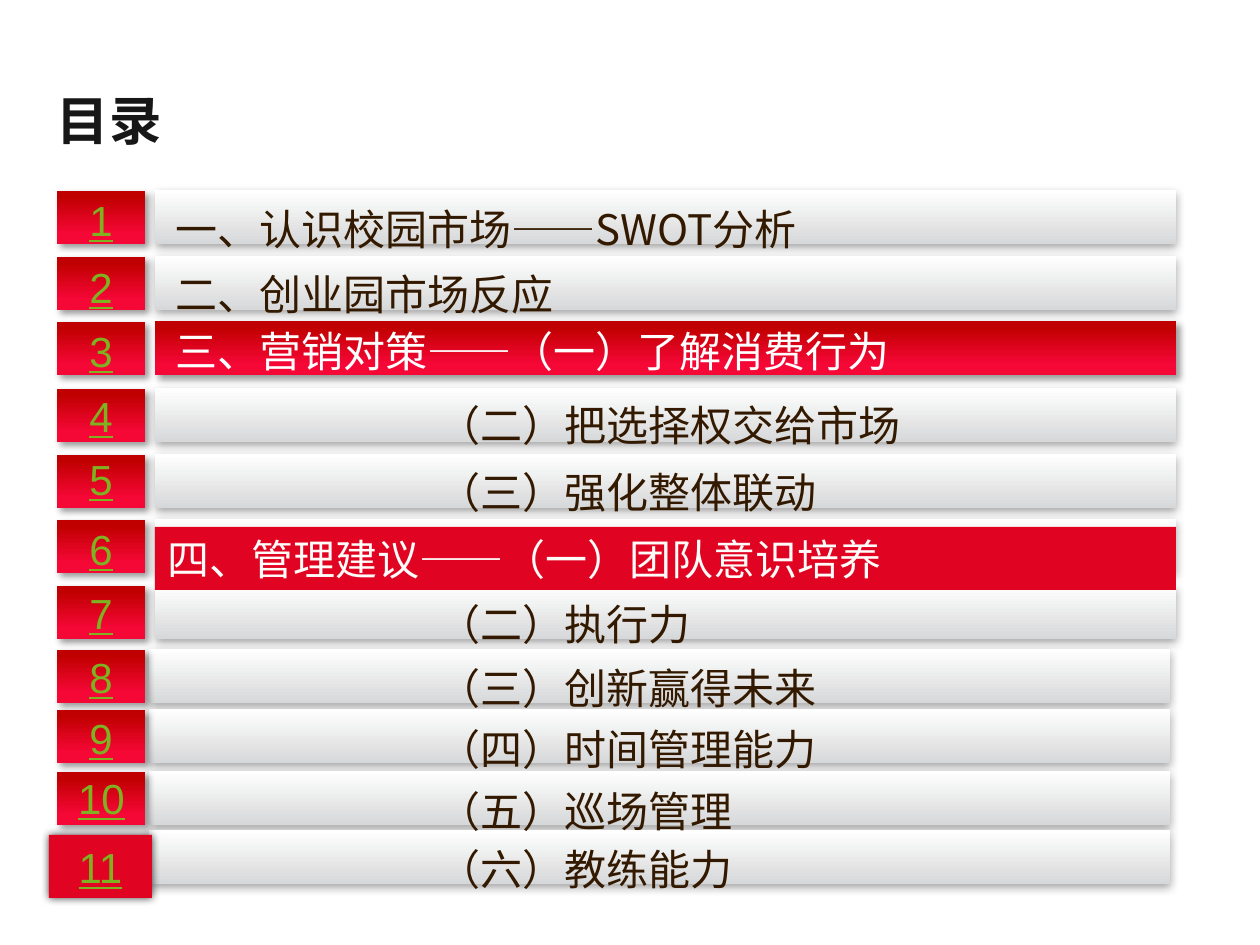
import pptx
import pptx.util
import pptx.dml.color
import pptx.enum.shapes
import pptx.enum.text
import pptx.oxml.ns
from lxml import etree

SCALE = 914400 / 126  # EMU per px
CJK = "Noto Sans CJK SC"
BROWN, WHITE, GREEN, RED = "321900", "FFFFFF", "7EB220", "E10422"
GREY_FADE = [(0, "D7D8D9"), (100, "FFFFFF")]
RED_FADE = [(20, "F50736"), (89, "C00000")]
# Shadows: opacity %, blur pt, distance pt, direction in degrees
SOFT, DEEP, GLOW = (35, 5, 1.8, 90), (40, 4, 3, 45), (75, 5, 0, 0)
BAR_W, BAR_H, TILE_W, TILE_H, LINE_H = 1021, 54, 88, 53, 63
SUB_INDENT = 263

# Bar top, label top, number top, indent, label
ROWS = [
    (190, 197, 188, 0, "一、认识校园市场——SWOT分析"),
    (256, 262, 255, 0, "二、创业园市场反应"),
    (321, 319, 319, 0, "三、营销对策——（一）了解消费行为"),
    (388, 393, 384, SUB_INDENT, "（二）把选择权交给市场"),
    (454, 460, 447, SUB_INDENT, "（三）强化整体联动"),
    (519, 527, 517, 0, "四、管理建议——（一）团队意识培养"),
    (585, 592, 581, SUB_INDENT, "（二）执行力"),
    (649, 656, 645, SUB_INDENT, "（三）创新赢得未来"),
    (709, 717, 706, SUB_INDENT, "（四）时间管理能力"),
    (771, 779, 766, SUB_INDENT, "（五）巡场管理"),
    (830, 837, 835, SUB_INDENT, "（六）教练能力"),
]


def px(n):
    return pptx.util.Emu(round(n * SCALE))


def rgb(value):
    return pptx.dml.color.RGBColor.from_string(value)


def add_shadow(sp, opacity, blur, dist, angle):
    qn = pptx.oxml.ns.qn
    effects = sp._element.spPr.find(qn("a:effectLst"))
    outer = etree.SubElement(
        effects, qn("a:outerShdw"), blurRad=str(round(blur * 12700)),
        dist=str(round(dist * 12700)), dir=str(angle * 60000),
        algn="ctr", rotWithShape="0")
    clr = etree.SubElement(outer, qn("a:srgbClr"), val="000000")
    etree.SubElement(clr, qn("a:alpha"), val=str(opacity * 1000))


def add_rect(s, x, y, w, h, fill, shadow=None):
    """Add a rectangle; fill is a hex colour or a list of gradient stops."""
    sp = s.shapes.add_shape(
        pptx.enum.shapes.MSO_SHAPE.RECTANGLE, px(x), px(y), px(w), px(h))
    sp.shadow.inherit = False
    sp.line.fill.background()
    if isinstance(fill, str):
        sp.fill.solid()
        sp.fill.fore_color.rgb = rgb(fill)
    else:
        sp.fill.gradient()
        sp.fill.gradient_angle = 90
        for stop, (position, color) in zip(sp.fill.gradient_stops, fill):
            stop.position = position / 100
            stop.color.rgb = rgb(color)
    if shadow:
        add_shadow(sp, *shadow)
    return sp


def write_text(sp, text, color, font=CJK, size=24, centred=False, indent=0):
    align = pptx.enum.text.PP_ALIGN
    tf = sp.text_frame
    tf.word_wrap = True
    tf.auto_size = pptx.enum.text.MSO_AUTO_SIZE.NONE
    tf.vertical_anchor = pptx.enum.text.MSO_ANCHOR.MIDDLE
    p = tf.paragraphs[0]
    p.alignment = align.CENTER if centred else align.LEFT
    if indent:
        p._p.get_or_add_pPr().set("marL", str(px(indent)))
    r = p.add_run()
    r.text = text
    r.font.size = pptx.util.Pt(size)
    r.font.name = font
    r.font.color.rgb = rgb(color)
    etree.SubElement(r._r.get_or_add_rPr(), pptx.oxml.ns.qn("a:ea"),
                     typeface=font)
    return p, r


def add_label(s, x, y, text, color, indent):
    sp = s.shapes.add_textbox(px(x), px(y), px(BAR_W), px(LINE_H))
    write_text(sp, text, color, indent=indent)


def write_number(sp, number):
    p, r = write_text(sp, str(number), GREEN, "Arial", centred=True)
    r.font.underline = True


def add_title(s, text):
    sp = s.shapes.title
    sp.left, sp.top, sp.width, sp.height = px(57), px(81), px(368), px(83)
    p, r = write_text(sp, text, "171717", size=30)
    sp.text_frame.margin_left = sp.text_frame.margin_right = 0
    p.line_spacing = 0.95
    r.font.bold = True


def main():
    prs = pptx.Presentation()
    prs.slide_width, prs.slide_height = px(1260), px(945)
    s = prs.slides.add_slide(prs.slide_layouts[5])
    add_title(s, "目录")

    # Bars behind the entries; the last four sit a little further left
    for i, (bar_y, *_) in enumerate(ROWS):
        fill, shadow = (RED_FADE, DEEP) if i == 2 else (GREY_FADE, SOFT)
        add_rect(s, 155 if i < 7 else 149, bar_y, BAR_W, BAR_H, fill, shadow)

    # Entry labels
    for i, (_, label_y, _, indent, text) in enumerate(ROWS):
        if i == 5:
            sp = add_rect(s, 155, label_y, BAR_W, LINE_H, RED)
            write_text(sp, text, "FFFCF9")
        else:
            add_label(s, 163, label_y, text, WHITE if i == 2 else BROWN, indent)

    # Numbered tiles; the last one is flat and wider
    for number, (bar_y, _, number_y, *_) in enumerate(ROWS, 1):
        if number == len(ROWS):
            sp = add_rect(s, 49, number_y, 103, LINE_H, RED, GLOW)
        else:
            add_rect(s, 57, bar_y + 1, TILE_W, TILE_H, RED_FADE, DEEP)
            w = 103 if number == 10 else 82
            sp = s.shapes.add_textbox(
                px(101 - w // 2), px(number_y), px(w), px(LINE_H))
        write_number(sp, number)

    prs.save("out.pptx")


if __name__ == "__main__":
    main()
